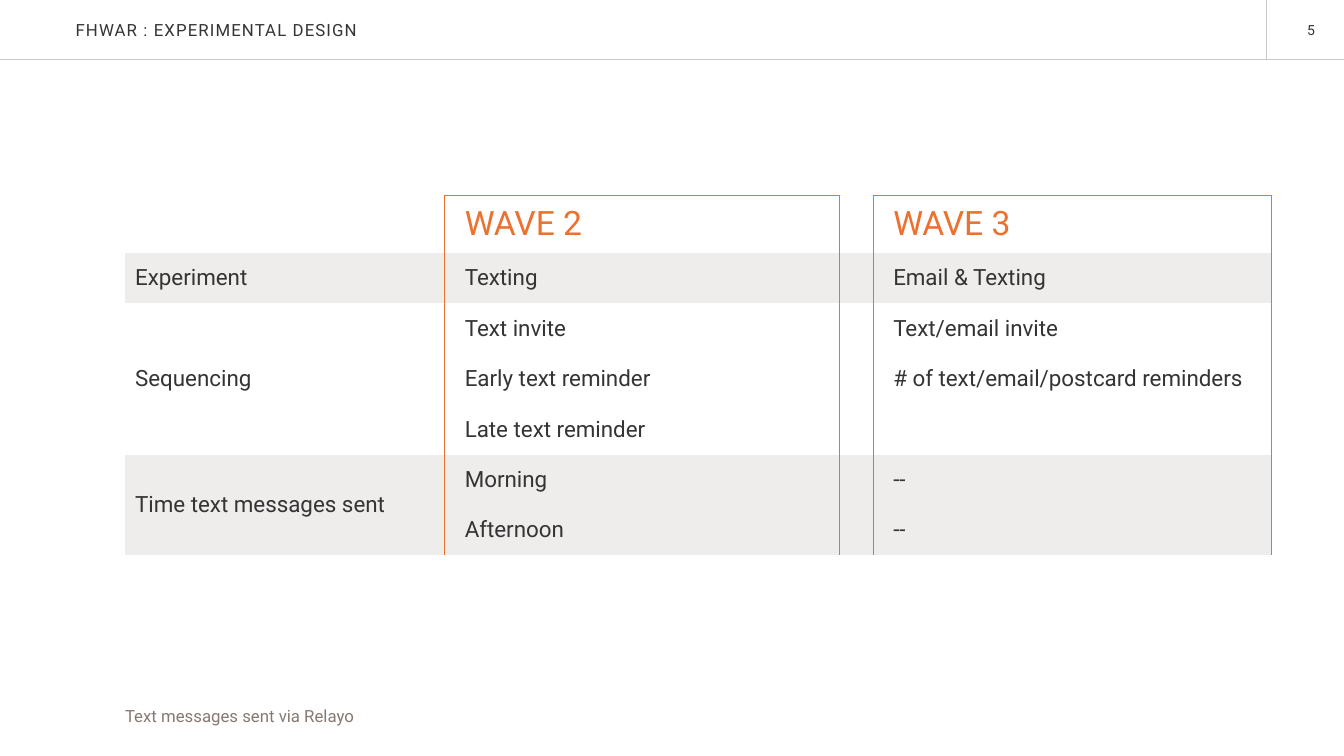
from lxml import etree
from pptx import Presentation
from pptx.dml.color import RGBColor
from pptx.enum.shapes import MSO_CONNECTOR
from pptx.enum.text import MSO_ANCHOR, MSO_AUTO_SIZE, PP_ALIGN
from pptx.oxml.ns import qn
from pptx.util import Inches, Pt

FONT = "Roboto"
INK = RGBColor(0x35, 0x34, 0x35)
TAUPE = RGBColor(0x87, 0x79, 0x71)
RULE_GRAY = RGBColor(0xCE, 0xC8, 0xC4)
ORANGE = RGBColor(0xEC, 0x71, 0x2E)
BAND = RGBColor(0xEF, 0xED, 0xEB)
MIDDLE = MSO_ANCHOR.MIDDLE
LEFT, RIGHT = PP_ALIGN.LEFT, PP_ALIGN.RIGHT
STRAIGHT = MSO_CONNECTOR.STRAIGHT
NO_FIT, FIT_SHAPE = MSO_AUTO_SIZE.NONE, MSO_AUTO_SIZE.SHAPE_TO_FIT_TEXT
TITLE_ONLY = 5

COLUMN_WIDTHS = [3.17, 3.92, 0.33, 3.95]
ROW_HEIGHTS = [0.57] + [0.5] * 6
WAVE_COLUMNS = (1, 3)
BAND_ROWS = (1, 5, 6)
MERGES = [(2, 4), (5, 6)]
DESIGN = [
    ["", "WAVE 2", "", "WAVE 3"],
    ["Experiment", "Texting", "", "Email & Texting"],
    ["Sequencing", "Text invite", "", "Text/email invite"],
    ["", "Early text reminder", "", "# of text/email/postcard reminders"],
    ["", "Late text reminder", "", ""],
    ["Time text messages sent", "Morning", "", "--"],
    ["", "Afternoon", "", "--"],
]


def write(frame, text, size, color=INK, align=LEFT, spacing=None):
    """Put one formatted line of text in a text frame."""
    para = frame.paragraphs[0]
    para.alignment = align
    span = para.add_run()
    span.text = text
    span.font.name = FONT
    span.font.size = Pt(size)
    span.font.color.rgb = color
    if spacing is not None:
        span.font._element.set("spc", str(round(spacing * 100)))


def clear_margins(frame):
    frame.margin_left = frame.margin_top = 0
    frame.margin_right = frame.margin_bottom = 0


def add_title(page, text):
    title = page.shapes.title
    title.left, title.top = Inches(0.75), Inches(0)
    title.width, title.height = Inches(8.19), Inches(0.6)
    frame = title.text_frame
    clear_margins(frame)
    frame.auto_size = NO_FIT
    frame.vertical_anchor = MIDDLE
    write(frame, text, 12, spacing=0.8)


def add_text_box(page, left, top, width, height):
    box = page.shapes.add_textbox(
        Inches(left), Inches(top), Inches(width), Inches(height))
    box.text_frame.word_wrap = True
    return box.text_frame


def add_rule(page, x1, y1, x2, y2):
    rule = page.shapes.add_connector(
        STRAIGHT, Inches(x1), Inches(y1), Inches(x2), Inches(y2))
    rule.line.color.rgb = RULE_GRAY
    rule.line.width = Pt(0.65)
    etree.SubElement(rule._element.spPr, qn("a:effectLst"))


def set_borders(cell, orange_sides):
    """Draw the named sides (L, R, T, B) in orange and hide the others."""
    properties = cell._tc.get_or_add_tcPr()
    for side in "LRTB":
        edge = etree.SubElement(properties, qn(f"a:ln{side}"), w=str(Pt(1)))
        if side in orange_sides:
            fill = etree.SubElement(edge, qn("a:solidFill"))
            etree.SubElement(fill, qn("a:srgbClr"), val=str(ORANGE))
        else:
            etree.SubElement(edge, qn("a:noFill"))


def format_cell(cell, row, column):
    sides = "R" if column == 0 else "LR"
    if row == 0 and column in WAVE_COLUMNS:
        sides += "T"
    set_borders(cell, sides)
    if row in BAND_ROWS:
        cell.fill.solid()
        cell.fill.fore_color.rgb = BAND
    else:
        cell.fill.background()
    cell.vertical_anchor = MIDDLE
    cell.margin_left = Inches(0.1 if column == 0 else 0.2)
    cell.margin_right = cell.margin_top = cell.margin_bottom = Inches(0.05)


def add_design_table(page):
    table = page.shapes.add_table(
        len(ROW_HEIGHTS), len(COLUMN_WIDTHS), Inches(1.24), Inches(1.94),
        Inches(sum(COLUMN_WIDTHS)), Inches(sum(ROW_HEIGHTS))).table
    table.first_row = table.horz_banding = False
    for column, width in zip(table.columns, COLUMN_WIDTHS):
        column.width = Inches(width)
    for row, height in zip(table.rows, ROW_HEIGHTS):
        row.height = Inches(height)
    for row, texts in enumerate(DESIGN):
        for column, text in enumerate(texts):
            cell = table.cell(row, column)
            format_cell(cell, row, column)
            if text:
                size, color = (24, ORANGE) if row == 0 else (16, INK)
                write(cell.text_frame, text, size, color)
    for first, last in MERGES:
        table.cell(first, 0).merge(table.cell(last, 0))


def main():
    deck = Presentation()
    deck.slide_width, deck.slide_height = Inches(13.33), Inches(7.5)
    page = deck.slides.add_slide(deck.slide_layouts[TITLE_ONLY])

    add_title(page, "FHWAR : EXPERIMENTAL DESIGN")
    add_rule(page, 0, 0.59, 13.33, 0.59)
    add_rule(page, 12.56, 0, 12.56, 0.59)
    number = add_text_box(page, 12.64, 0.16, 0.5, 0.27)
    number.auto_size = FIT_SHAPE
    write(number, "5", 10, align=RIGHT)

    add_design_table(page)
    footnote = add_text_box(page, 1.24, 7, 11.51, 0.32)
    clear_margins(footnote)
    write(footnote, "Text messages sent via Relayo", 12, TAUPE)
    deck.save("out.pptx")


if __name__ == "__main__":
    main()
